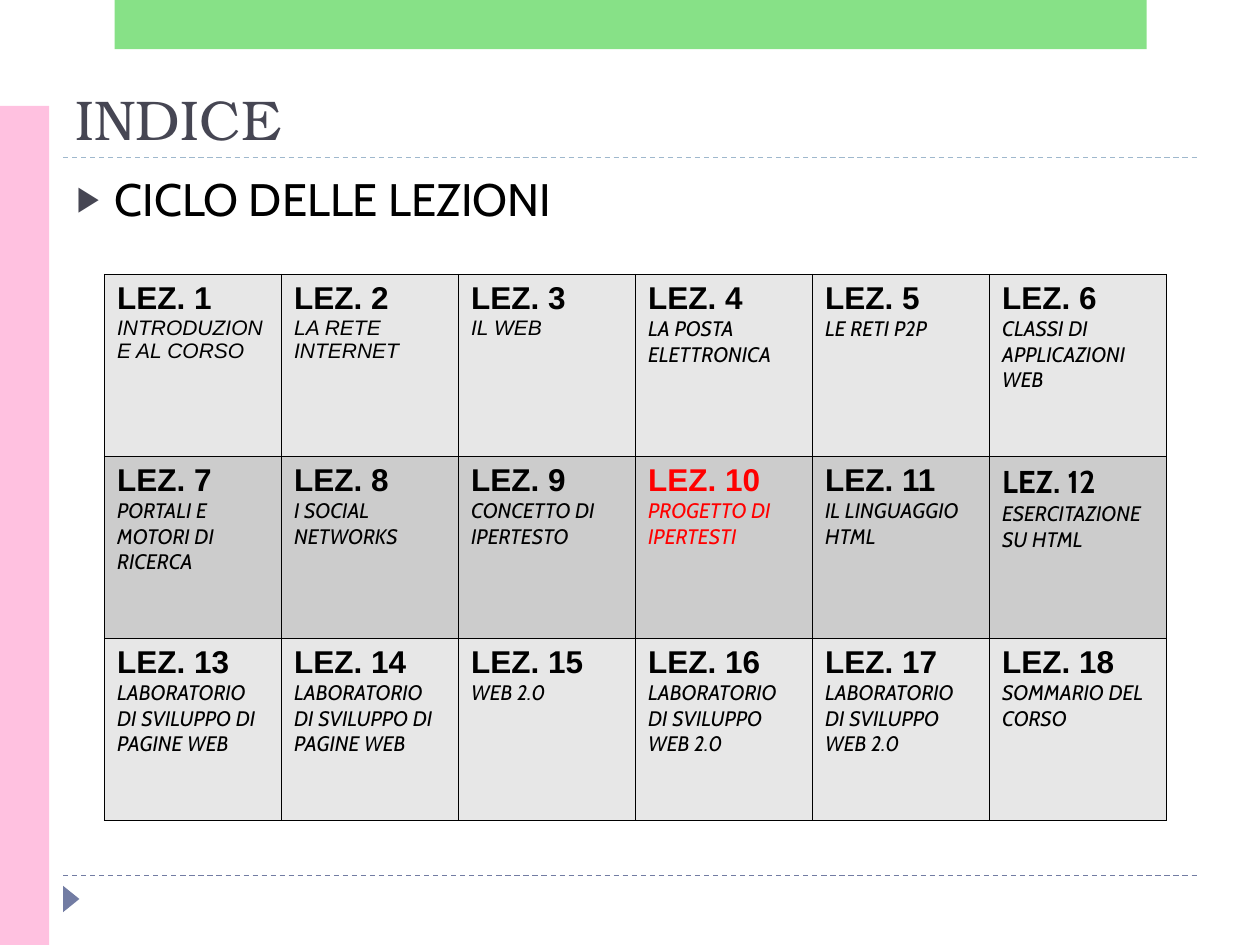
import copy

import lxml.etree
import pptx
import pptx.dml.color
import pptx.enum.dml
import pptx.enum.shapes
import pptx.enum.text
import pptx.oxml.ns
import pptx.util

Inches = pptx.util.Inches
Pt = pptx.util.Pt
SHAPE = pptx.enum.shapes.MSO_SHAPE
ANCHOR = pptx.enum.text.MSO_ANCHOR

HEADING = {"name": "Arial", "size": Pt(18), "bold": True, "italic": False}
TOPIC = {"name": "Cabin", "size": Pt(12), "bold": False, "italic": True}
TITLE = {"name": "TeX Gyre Bonum", "size": Pt(32)}
BODY = {"name": "Cabin", "size": Pt(26)}
ROW_FILLS = ["E7E7E7", "CCCCCC", "E7E7E7"]
COLUMNS = 6
CURRENT_LESSON = 10
ARIAL_TOPICS = (1, 2, 3)
CABIN_HEADINGS = (12,)
LESSONS = [
    "INTRODUZIONE AL CORSO", "LA RETE INTERNET", "IL WEB",
    "LA POSTA ELETTRONICA", "LE RETI P2P", "CLASSI DI APPLICAZIONI WEB",
    "PORTALI E MOTORI DI RICERCA", "I SOCIAL NETWORKS", "CONCETTO DI IPERTESTO",
    "PROGETTO DI IPERTESTI", "IL LINGUAGGIO HTML", "ESERCITAZIONE SU HTML",
    "LABORATORIO DI SVILUPPO DI PAGINE WEB",
    "LABORATORIO DI SVILUPPO DI PAGINE WEB", "WEB 2.0",
    "LABORATORIO DI SVILUPPO \nWEB 2.0", "LABORATORIO DI SVILUPPO \nWEB 2.0",
    "SOMMARIO DEL CORSO",
]


def rgb(value):
    """Turn a hex string into a colour."""
    return pptx.dml.color.RGBColor.from_string(value)


def add_xml(parent, tag, **attrs):
    """Append a DrawingML element and return it."""
    return lxml.etree.SubElement(parent, pptx.oxml.ns.qn(tag), attrs)


def add_line(s, y):
    """Draw a dashed rule across the slide."""
    def at(x):
        return Inches(x), Inches(y)

    kind = pptx.enum.shapes.MSO_CONNECTOR.STRAIGHT
    sp = s.shapes.add_connector(kind, *at(0.5), *at(9.5))
    return sp


def add_rule(s, y, color):
    """Add a dashed rule in the given colour, without shadow."""
    sp = add_line(s, y)
    sp.line.color.rgb = rgb(color)
    sp.line.width = Pt(0.75)
    sp.line.dash_style = pptx.enum.dml.MSO_LINE.DASH
    add_xml(sp._element.spPr, "a:effectLst")


def add_block(s, kind, box, color, rotation=0, alpha=100):
    """Add a plain filled shape."""
    sp = s.shapes.add_shape(kind, *map(Inches, box))
    sp.rotation = rotation
    sp.shadow.inherit = False
    sp.line.fill.background()
    sp.fill.solid()
    sp.fill.fore_color.rgb = rgb(color)
    if alpha < 100:
        clr = sp._element.spPr.find(".//" + pptx.oxml.ns.qn("a:srgbClr"))
        add_xml(clr, "a:alpha", val=str(alpha * 1000))


def write(p, text, fmt, color):
    """Fill a paragraph with text in one format."""
    p.text = text
    for r in p.runs:
        for name, value in fmt.items():
            setattr(r.font, name, value)
        r.font.color.rgb = rgb(color)
    for br in p._p.findall(pptx.oxml.ns.qn("a:br")):
        br.append(copy.deepcopy(p.runs[0]._r.rPr))


def add_text(s, box, text, fmt, color, anchor=ANCHOR.TOP):
    """Add a one-paragraph text box and return its paragraph."""
    tf = s.shapes.add_textbox(*map(Inches, box)).text_frame
    tf.word_wrap = True
    tf.vertical_anchor = anchor
    p = tf.paragraphs[0]
    write(p, text, fmt, color)
    return p


def add_bullet(p, char, color, percent, indent):
    """Give a paragraph a hanging bullet."""
    pPr = p._p.get_or_add_pPr()
    pPr.set("marL", str(Inches(indent)))
    pPr.set("indent", str(-Inches(indent)))
    add_xml(add_xml(pPr, "a:buClr"), "a:srgbClr", val=color)
    add_xml(pPr, "a:buSzPct", val=str(percent * 1000))
    add_xml(pPr, "a:buFont", typeface="Arial")
    add_xml(pPr, "a:buChar", char=char)


def style_cell(cell, color):
    """Give a cell black borders and a solid fill."""
    tcPr = cell._tc.get_or_add_tcPr()
    for side in "LRTB":
        ln = add_xml(tcPr, f"a:ln{side}", w=str(Pt(1)))
        add_xml(add_xml(ln, "a:solidFill"), "a:srgbClr", val="000000")
    cell.fill.solid()
    cell.fill.fore_color.rgb = rgb(color)


def add_lessons(s):
    """Add the table of lessons, numbered row by row."""
    rows = len(ROW_FILLS)
    box = map(Inches, (0.83, 2.18, 1.405 * COLUMNS, 1.444 * rows))
    table = s.shapes.add_table(rows, COLUMNS, *box).table
    for number, topic in enumerate(LESSONS, 1):
        row, col = divmod(number - 1, COLUMNS)
        cell = table.cell(row, col)
        style_cell(cell, ROW_FILLS[row])
        color = "FF0000" if number == CURRENT_LESSON else "000000"
        heading = HEADING | ({"name": "Cabin"} if number in CABIN_HEADINGS else {})
        detail = TOPIC | ({"name": "Arial"} if number in ARIAL_TOPICS else {})
        tf = cell.text_frame
        write(tf.paragraphs[0], f"LEZ. {number}", heading, color)
        write(tf.add_paragraph(), topic, detail, color)


def main():
    """Build the slide and save it."""
    prs = pptx.Presentation()
    prs.slide_width, prs.slide_height = Inches(10), Inches(7.5)
    s = prs.slides.add_slide(prs.slide_layouts[6])
    add_rule(s, 6.95, "727CA3")
    add_rule(s, 1.25, "9FB8CD")
    add_block(s, SHAPE.ISOSCELES_TRIANGLE, (0.46, 7.07, 0.21, 0.13), "727CA3", rotation=90)
    add_block(s, SHAPE.RECTANGLE, (0, 0.84, 0.39, 6.66), "FFC1E0")
    add_block(s, SHAPE.RECTANGLE, (0.91, 0, 8.19, 0.39), "62D862", alpha=76)
    add_text(s, (0.5, 0.55, 9, 0.7), "INDICE", TITLE, "464653", ANCHOR.BOTTOM)
    p = add_text(s, (0.51, 1.31, 9, 0.79), "CICLO DELLE LEZIONI", BODY, "000000")
    add_bullet(p, "▶", "464653", 76, 0.3)
    add_lessons(s)
    prs.save("out.pptx")


if __name__ == "__main__":
    main()
